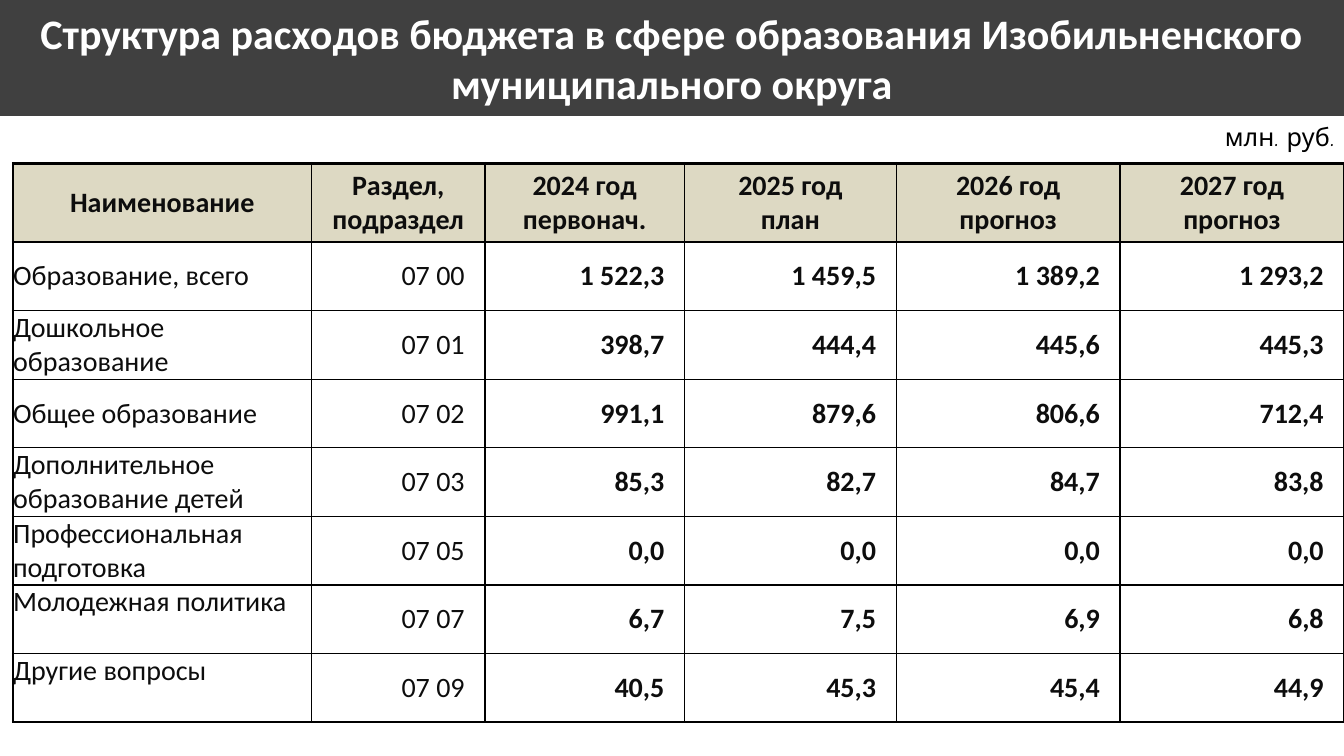
"""Build the slide on education spending in the district budget."""
import pptx
import pptx.dml.color
import pptx.enum.shapes
import pptx.enum.text
import pptx.oxml
import pptx.oxml.ns
import pptx.util

Inches = pptx.util.Inches
Align = pptx.enum.text.PP_ALIGN
Anchor = pptx.enum.text.MSO_ANCHOR
COLORS = {"band": "404040", "head": "DDD9C3", "ink": "0D0D0D",
          "line": "000000", "white": "FFFFFF"}


def rgb(name):
    return pptx.dml.color.RGBColor.from_string(COLORS[name])


def write(frame, text, size=20, bold=False, color="ink", font="Calibri", align=Align.LEFT):
    frame.text = text
    for para in frame.paragraphs:
        para.alignment = align
        for run in para.runs:
            run.font.size = pptx.util.Pt(size)
            run.font.bold = bold
            run.font.name = font
            run.font.color.rgb = rgb(color)


deck = pptx.Presentation()
deck.slide_width, deck.slide_height = Inches(13.33), Inches(7.5)
slide = deck.slides.add_slide(deck.slide_layouts[6])

band = slide.shapes.add_shape(pptx.enum.shapes.MSO_SHAPE.RECTANGLE, 0, 0,
                              deck.slide_width, Inches(1.15))
band.shadow.inherit = False
band.fill.solid()
band.fill.fore_color.rgb = rgb("band")
band.line.fill.background()
band.text_frame.word_wrap = True
band.text_frame.vertical_anchor = Anchor.MIDDLE
write(band.text_frame,
      "Структура расходов бюджета в сфере образования Изобильненского муниципального округа",
      size=30, bold=True, color="white", align=Align.CENTER)

rows = [
    ["Наименование", "Раздел, подраздел", "2024 год первонач.", "2025 год\vплан",
     "2026 год прогноз", "2027 год прогноз"],
    ["Образование, всего", "07 00", "1 522,3", "1 459,5", "1 389,2", "1 293,2"],
    ["Дошкольное образование", "07 01", "398,7", "444,4", "445,6", "445,3"],
    ["Общее образование", "07 02", "991,1", "879,6", "806,6", "712,4"],
    ["Дополнительное образование детей", "07 03", "85,3", "82,7", "84,7", "83,8"],
    ["Профессиональная подготовка", "07 05", "0,0", "0,0", "0,0", "0,0"],
    ["Молодежная политика", "07 07", "6,7", "7,5", "6,9", "6,8"],
    ["Другие вопросы", "07 09", "40,5", "45,3", "45,4", "44,9"],
]
widths = [2.96, 1.72, 1.98, 2.1, 2.22, 2.22]
last_row, last_col = len(rows) - 1, len(widths) - 1
table = slide.shapes.add_table(len(rows), len(widths), Inches(0.13), Inches(1.62),
                               Inches(13.2), Inches(5.55)).table
table.first_row = table.horz_banding = False
for col, width in zip(table.columns, widths):
    col.width = Inches(width)

for r, row in enumerate(rows):
    table.rows[r].height = Inches(0.68 if r else 0.77)
    for c, text in enumerate(row):
        cell = table.cell(r, c)
        top = (r == 0 and c > 0) or (r >= 6 and c == 0)
        cell.vertical_anchor = Anchor.TOP if top else Anchor.MIDDLE
        if r == 0:
            align, sides, ends = Align.CENTER, (0.1, 0.1), 0.05
        elif c == 0:
            align, sides, ends = Align.JUSTIFY, (0, 0), 0
        else:
            align, sides, ends = Align.RIGHT, (0, 0.2), 0
        cell.margin_left, cell.margin_right = map(Inches, sides)
        cell.margin_top = cell.margin_bottom = Inches(ends)
        write(cell.text_frame, text, bold=r == 0 or c > 1, align=align)

        props = cell._tc.get_or_add_tcPr()
        edges = {"L": c == 0, "R": c == last_col, "T": r == 0, "B": r == last_row}
        for side, outer in edges.items():
            weight = pptx.util.Pt(2.25 if outer else 1)
            props.append(pptx.oxml.parse_xml(
                f'<a:ln{side} {pptx.oxml.ns.nsdecls("a")} w="{weight}"><a:solidFill>'
                f'<a:srgbClr val="{COLORS["line"]}"/></a:solidFill></a:ln{side}>'))
        if r == 0:
            cell.fill.solid()
            cell.fill.fore_color.rgb = rgb("head")
        else:
            cell.fill.background()

unit = slide.shapes.add_textbox(Inches(12.05), Inches(1.15), Inches(1.28), Inches(0.4))
unit.text_frame.word_wrap = False
unit.text_frame.auto_size = pptx.enum.text.MSO_AUTO_SIZE.SHAPE_TO_FIT_TEXT
write(unit.text_frame, "млн. руб.", size=18, color="line", font="Comic Neue")

deck.save("out.pptx")
